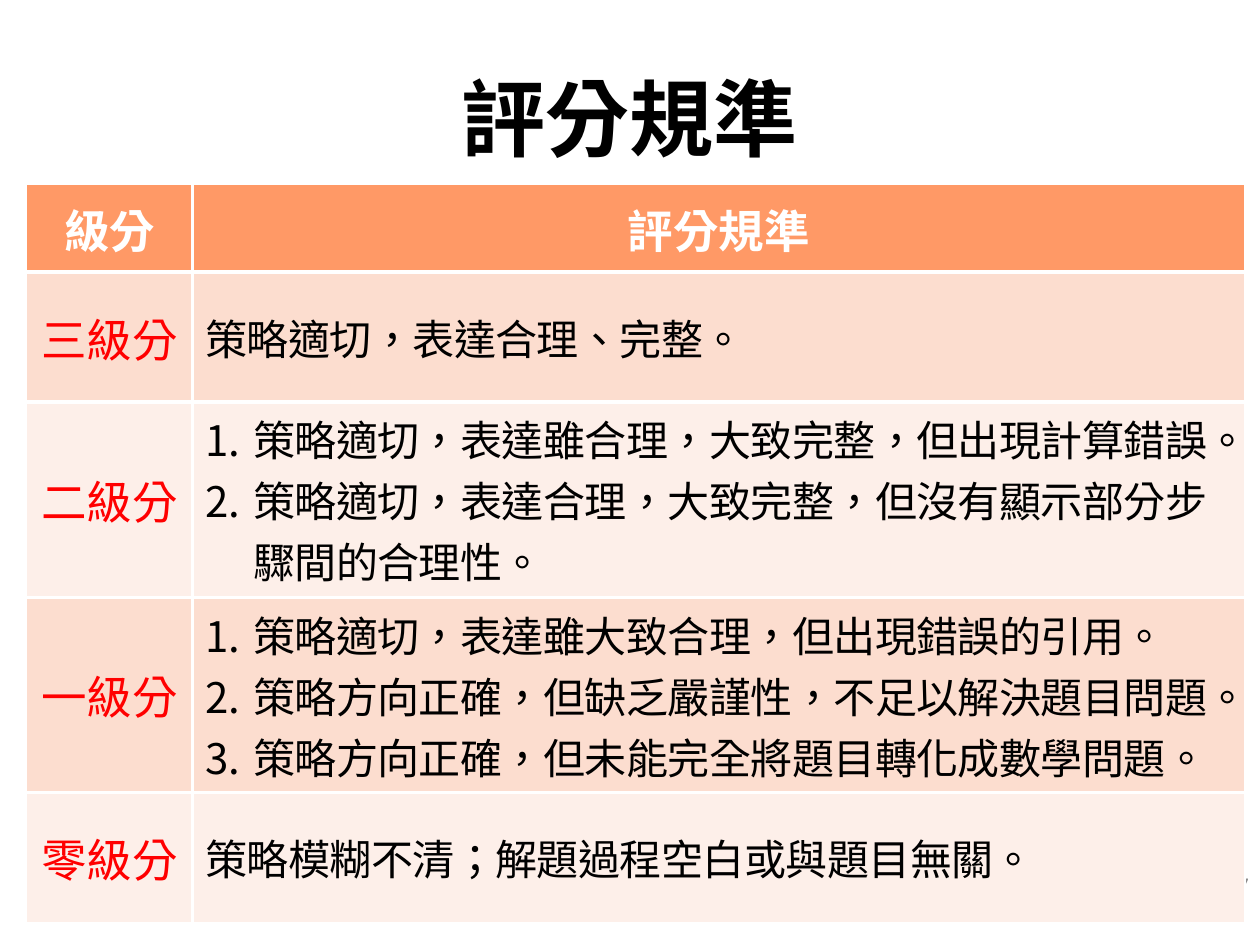
from lxml import etree
from pptx import Presentation
from pptx.dml.color import RGBColor
from pptx.enum.text import MSO_ANCHOR, PP_ALIGN
from pptx.oxml.ns import qn
from pptx.util import Inches, Pt

CENTER, LEFT, RIGHT = PP_ALIGN.CENTER, PP_ALIGN.LEFT, PP_ALIGN.RIGHT
MIDDLE = MSO_ANCHOR.MIDDLE
BLACK = RGBColor(0x00, 0x00, 0x00)
WHITE = RGBColor(0xFF, 0xFF, 0xFF)
RED = RGBColor(0xFF, 0x00, 0x00)
GRAY = RGBColor(0x89, 0x89, 0x89)
ORANGE = RGBColor(0xFF, 0x99, 0x66)
BANDS = (RGBColor(0xFC, 0xDD, 0xCF), RGBColor(0xFD, 0xEF, 0xE9))
CJK = "Noto Sans CJK SC"

# Content
TITLE = "評分規準"
PAGE_NUMBER = "17"
HEADER = ("級分", "評分規準")
LEVELS = [
    ("三級分", ["策略適切，表達合理、完整。"]),
    ("二級分", ["策略適切，表達雖合理，大致完整，但出現計算錯誤。",
             "策略適切，表達合理，大致完整，但沒有顯示部分步驟間的合理性。"]),
    ("一級分", ["策略適切，表達雖大致合理，但出現錯誤的引用。",
             "策略方向正確，但缺乏嚴謹性，不足以解決題目問題。",
             "策略方向正確，但未能完全將題目轉化成數學問題。"]),
    ("零級分", ["策略模糊不清；解題過程空白或與題目無關。"]),
]
COLUMN_WIDTHS = (1.32, 8.35)
ROW_HEIGHTS = (0.7, 1.03, 1.55, 1.55, 1.03)


def add_run(p, text, size, color, font, bold=False, spacing=None):
    r = p.add_run()
    r.text = text
    r.font.size, r.font.bold, r.font.name = Pt(size), bold, font
    r.font.color.rgb = color
    rpr = r.font._element
    rpr.set("lang", "zh-TW")
    if spacing is not None:
        rpr.set("spc", str(spacing))
    rpr.find(qn("a:latin")).addnext(
        rpr.makeelement(qn("a:ea"), {"typeface": CJK}))


def add_text(s, box, text, size, color, font, align, bold=False):
    tf = s.shapes.add_textbox(*map(Inches, box)).text_frame
    tf.word_wrap, tf.vertical_anchor = True, MIDDLE
    tf.paragraphs[0].alignment = align
    add_run(tf.paragraphs[0], text, size, color, font, bold)


def number_paragraph(p):
    ppr = p._p.get_or_add_pPr()
    ppr.set("marL", str(Inches(0.38)))
    ppr.set("indent", str(-Inches(0.38)))
    etree.SubElement(ppr, qn("a:buFont"), typeface=CJK)
    etree.SubElement(ppr, qn("a:buAutoNum"), type="arabicPeriod")


def style_cell(cell, fill, borders):
    tcpr = cell._tc.get_or_add_tcPr()
    for side, width in borders.items():
        ln = etree.SubElement(tcpr, qn("a:ln" + side), w=str(Pt(width)))
        solid = etree.SubElement(ln, qn("a:solidFill"))
        etree.SubElement(solid, qn("a:srgbClr"), val=str(WHITE))
    cell.fill.solid()
    cell.fill.fore_color.rgb = fill
    cell.vertical_anchor = MIDDLE


def fill_cell(cell, lines, align, **style):
    tf = cell.text_frame
    for i, line in enumerate(lines):
        p = tf.add_paragraph() if i else tf.paragraphs[0]
        if len(lines) > 1:
            number_paragraph(p)
        p.alignment = align
        add_run(p, line, **style)


def cell_borders(row, col):
    """Thin outer edges, thicker inner ones, thickest below the header."""
    last = len(ROW_HEIGHTS) - 1
    return {
        "L": 2.25 if col else 1,
        "R": 1 if col else 2.25,
        "T": {0: 1, 1: 3}.get(row, 2.25),
        "B": {0: 3, last: 1}.get(row, 2.25),
    }


def main():
    prs = Presentation()
    prs.slide_width, prs.slide_height = Inches(10), Inches(7.5)
    s = prs.slides.add_slide(prs.slide_layouts[6])

    # Title and page number
    add_text(s, (0.5, 0.3, 9, 1.25), TITLE, 48, BLACK, CJK, CENTER, True)
    add_text(s, (7.68, 6.82, 2.33, 0.4), PAGE_NUMBER, 12, GRAY, "Calibri", RIGHT)

    # Rubric table
    table = s.shapes.add_table(
        len(ROW_HEIGHTS), len(COLUMN_WIDTHS), Inches(0.21), Inches(1.46),
        Inches(sum(COLUMN_WIDTHS)), Inches(sum(ROW_HEIGHTS))).table
    for column, width in zip(table.columns, COLUMN_WIDTHS):
        column.width = Inches(width)
    for row, height in zip(table.rows, ROW_HEIGHTS):
        row.height = Inches(height)
    for i in range(len(ROW_HEIGHTS)):
        fill = BANDS[(i - 1) % 2] if i else ORANGE
        for j in range(len(COLUMN_WIDTHS)):
            style_cell(table.cell(i, j), fill, cell_borders(i, j))

    # Table text
    for j, heading in enumerate(HEADER):
        fill_cell(table.cell(0, j), [heading], CENTER,
                  size=26, color=WHITE, font="Arial", bold=True)
    for i, (level, criteria) in enumerate(LEVELS, 1):
        fill_cell(table.cell(i, 0), [level], CENTER,
                  size=26, color=RED, font="Times New Roman")
        fill_cell(table.cell(i, 1), criteria, LEFT,
                  size=24, color=BLACK, font="Times New Roman", spacing=-30)

    prs.save("out.pptx")


if __name__ == "__main__":
    main()
